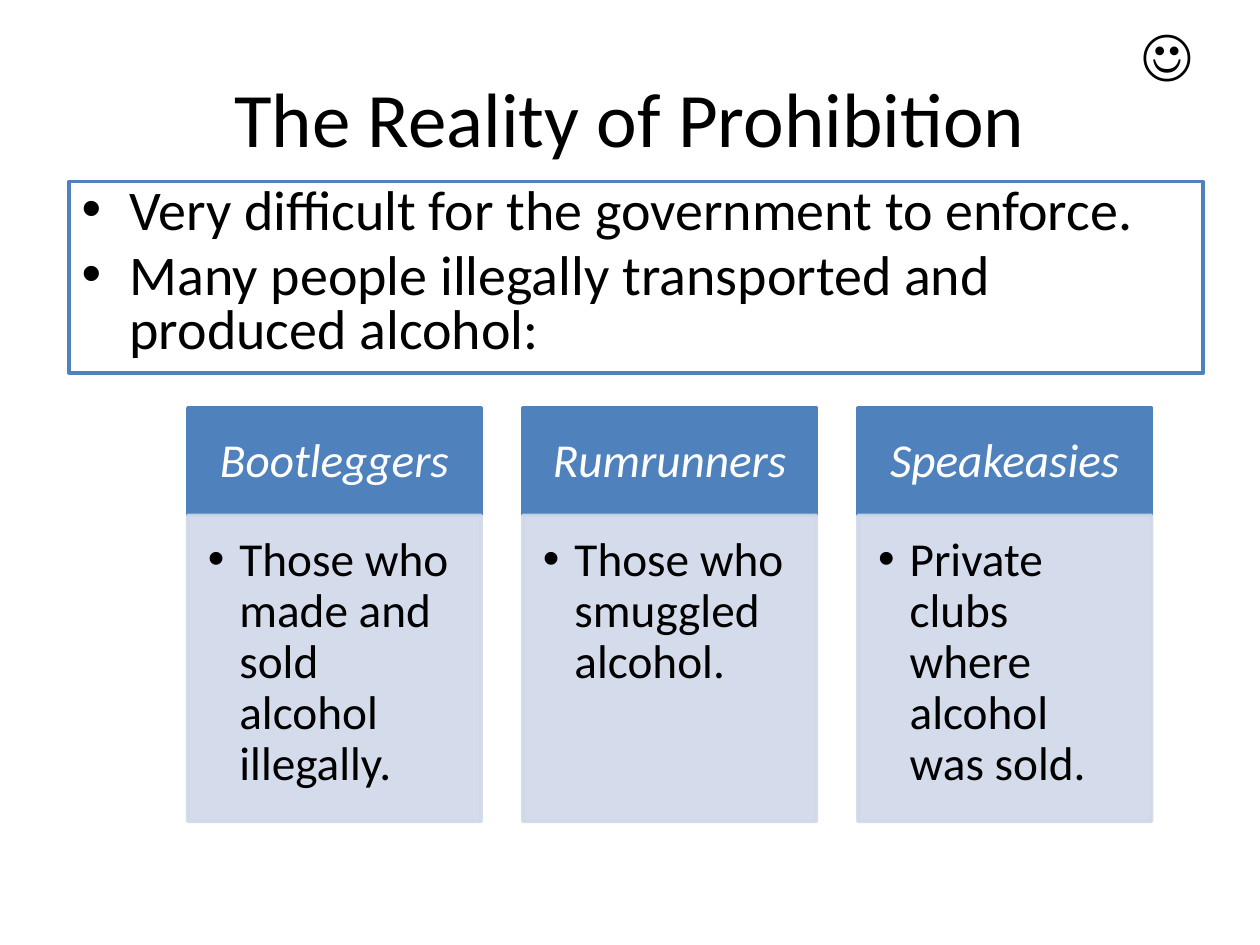
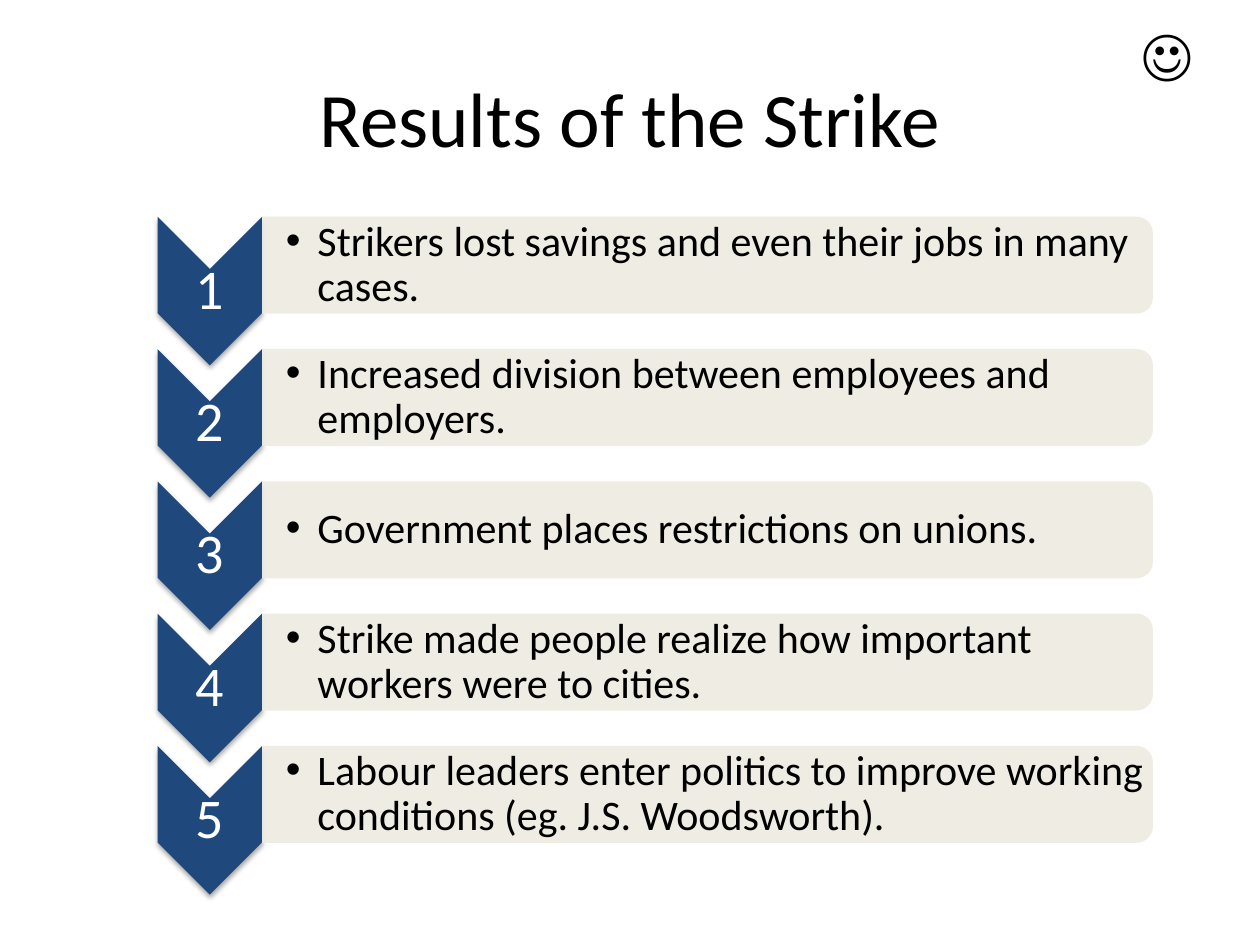
from lxml import etree
from pptx import Presentation
from pptx.dml.color import RGBColor
from pptx.enum import shapes, text
from pptx.oxml.ns import qn
from pptx.util import Inches, Pt

# Content
REALITY_TITLE = "The Reality of Prohibition"
REALITY_POINTS = [
    "Very difficult for the government to enforce.",
    "Many people illegally transported and produced alcohol:",
]
LAWBREAKERS = [
    ("Bootleggers", "Those who made and sold alcohol illegally."),
    ("Rumrunners", "Those who smuggled alcohol."),
    ("Speakeasies", "Private clubs where alcohol was sold."),
]
STRIKE_TITLE = "Results of the Strike"
STRIKE_RESULTS = [
    "Strikers lost savings and even their jobs in many cases.",
    "Increased division between employees and employers.",
    "Government places restrictions on unions.",
    "Strike made people realize how important workers were to cities.",
    "Labour leaders enter politics to improve working conditions (eg. J.S. Woodsworth).",
]
SMILEY = "☺"

# Shared style
FONT = "Calibri"
BLACK = RGBColor(0x00, 0x00, 0x00)
WHITE = RGBColor(0xFF, 0xFF, 0xFF)
BLUE = RGBColor(0x4F, 0x81, 0xBD)
PALE_BLUE = RGBColor(0xD0, 0xD8, 0xE8)
NAVY = RGBColor(0x1F, 0x49, 0x7D)
CREAM = RGBColor(0xEE, 0xEC, 0xE1)
MIDDLE, TOP = text.MSO_ANCHOR.MIDDLE, text.MSO_ANCHOR.TOP
CENTER, LEFT = text.PP_ALIGN.CENTER, text.PP_ALIGN.LEFT
RECT = shapes.MSO_SHAPE.RECTANGLE


def inches(*lengths):
    return [Inches(length) for length in lengths]


def make_translucent(color_parent, percent):
    color = color_parent.find(".//" + qn("a:srgbClr"))
    etree.SubElement(color, qn("a:alpha"), val=str(percent * 1000))


def add_block(page, preset, at, fill, line=None, opacity=100):
    block = page.shapes.add_shape(preset, *inches(*at))
    block.shadow.inherit = False
    block.fill.solid()
    block.fill.fore_color.rgb = fill
    if line is None:
        block.line.fill.background()
    else:
        block.line.color.rgb = line
        block.line.width = Pt(2)
    if opacity < 100:
        properties = block._element.spPr
        make_translucent(properties.find(qn("a:solidFill")), opacity)
        if line is not None:
            make_translucent(properties.find(qn("a:ln")), opacity)
    return block


def add_soft_shadow(block):
    effects = block._element.spPr.find(qn("a:effectLst"))
    shadow = etree.SubElement(effects, qn("a:outerShdw"), blurRad=str(Pt(3.1)),
                              dist=str(Pt(1.8)), dir="5400000", rotWithShape="0")
    color = etree.SubElement(shadow, qn("a:srgbClr"), val="000000")
    etree.SubElement(color, qn("a:alpha"), val="35000")


def add_bullet(para, indent):
    properties = para._p.get_or_add_pPr()
    properties.set("marL", str(Inches(indent)))
    properties.set("indent", str(-Inches(indent)))
    etree.SubElement(properties, qn("a:buFont"), typeface="Arial")
    etree.SubElement(properties, qn("a:buChar"), char="•")


def write(box, lines, size, color=BLACK, align=LEFT, anchor=TOP, insets=(0.1, 0.05, 0.1, 0.05),
          spacing=None, before=0, indent=0, italic=None, wrap=True):
    frame = box.text_frame
    frame.word_wrap = wrap
    frame.vertical_anchor = anchor
    (frame.margin_left, frame.margin_top,
     frame.margin_right, frame.margin_bottom) = inches(*insets)
    for number, line in enumerate(lines):
        para = frame.add_paragraph() if number else frame.paragraphs[0]
        para.text = line
        para.alignment = align
        if spacing:
            para.line_spacing = spacing
        if number:
            para.space_before = Pt(before)
        if indent:
            add_bullet(para, indent)
        para.font.name = FONT
        para.font.size = Pt(size)
        para.font.color.rgb = color
        para.font.italic = italic


def add_text(page, at, lines, size, **style):
    write(page.shapes.add_textbox(*inches(*at)), lines, size, **style)


def add_page(deck, title):
    page = deck.slides.add_slide(deck.slide_layouts[5])
    heading = page.shapes.title
    heading.left, heading.top, heading.width, heading.height = inches(0.5, 0.3, 9, 1.25)
    write(heading, [title], 44, align=CENTER, anchor=MIDDLE)
    add_text(page, (8.96, 0.1, 0.58, 0.64), [SMILEY], 32, wrap=False)
    return page


def build_reality(deck):
    page = add_page(deck, REALITY_TITLE)
    summary = add_block(page, RECT, (0.55, 1.44, 9, 1.52), WHITE, BLUE)
    write(summary, REALITY_POINTS, 32, spacing=0.8, before=6.4, indent=0.38)

    # Three columns: heading above description
    left, top, width, pitch = 1.49, 3.24, 2.33, 2.66
    head_height, body_height = 0.85, 2.43
    for column, (name, description) in enumerate(LAWBREAKERS):
        x = left + column * pitch
        head = add_block(page, RECT, (x, top, width, head_height), BLUE, BLUE)
        write(head, [name], 27, WHITE, CENTER, MIDDLE, (0.21, 0.12, 0.21, 0.12),
              spacing=0.9, italic=True)
        body = add_block(page, RECT, (x, top + head_height, width, body_height),
                         PALE_BLUE, PALE_BLUE, opacity=90)
        write(body, [description], 27, insets=(0.16, 0.16, 0.21, 0.24),
              spacing=0.9, indent=0.25)


def add_turned(page, preset, at, fill, opacity=100):
    """Place a shape turned a quarter so that it covers the given area."""
    left, top, width, height = at
    shift = (width - height) / 2
    block = add_block(page, preset, (left + shift, top - shift, height, width),
                      fill, opacity=opacity)
    block.rotation = 90
    return block


def build_strike(deck):
    page = add_page(deck, STRIKE_TITLE)
    left, top, pitch = 1.25, 1.72, 1.05
    arrow_width, arrow_height = 0.83, 1.18
    panel_width, panel_height = 7.07, 0.77
    margin = 0.02
    panel_left = left + arrow_width
    for row, result in enumerate(STRIKE_RESULTS):
        y = top + row * pitch
        # Numbered arrow
        arrow = add_turned(page, shapes.MSO_SHAPE.CHEVRON,
                           (left, y, arrow_width, arrow_height), NAVY)
        add_soft_shadow(arrow)
        notch = arrow_width / 2
        add_text(page, (left, y + notch, arrow_width, arrow_height - 2 * notch),
                 [str(row + 1)], 32, color=WHITE, align=CENTER, anchor=MIDDLE,
                 insets=[margin] * 4, spacing=0.9)
        # Result panel
        add_turned(page, shapes.MSO_SHAPE.ROUND_2_SAME_RECTANGLE,
                   (panel_left, y, panel_width, panel_height), CREAM, opacity=90)
        add_text(page, (panel_left, y + 0.04, panel_width - 0.04, panel_height - 0.08),
                 [result], 24, anchor=MIDDLE, insets=(0.19, margin, margin, margin),
                 spacing=0.9, indent=0.25)


def main():
    deck = Presentation()
    deck.slide_width, deck.slide_height = inches(10, 7.5)
    build_reality(deck)
    build_strike(deck)
    deck.save("out.pptx")


if __name__ == "__main__":
    main()
